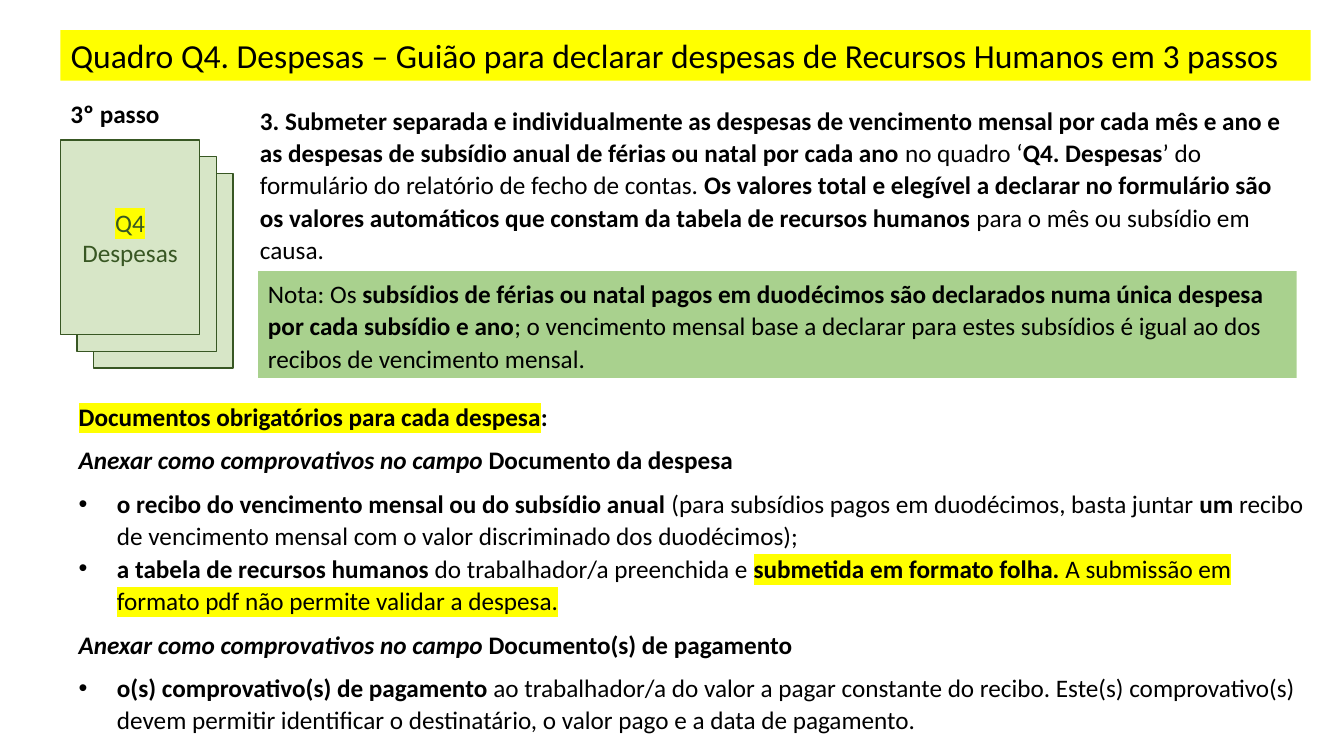
from lxml import etree
from pptx import Presentation
from pptx.dml.color import RGBColor
from pptx.enum.shapes import MSO_SHAPE
from pptx.enum.text import MSO_ANCHOR, MSO_AUTO_SIZE, PP_ALIGN
from pptx.oxml.ns import qn
from pptx.util import Inches, Pt

BLACK = RGBColor(0x00, 0x00, 0x00)
YELLOW = RGBColor(0xFF, 0xFF, 0x00)
GREEN = RGBColor(0xA9, 0xD1, 0x8E)
PALE = RGBColor(0xD7, 0xE6, 0xC7)
DARK = RGBColor(0x38, 0x57, 0x23)
RECT = MSO_SHAPE.RECTANGLE
LEFT, CENTER = PP_ALIGN.LEFT, PP_ALIGN.CENTER
TOP, MIDDLE = MSO_ANCHOR.TOP, MSO_ANCHOR.MIDDLE
GROW, FIXED = MSO_AUTO_SIZE.SHAPE_TO_FIT_TEXT, MSO_AUTO_SIZE.NONE
INDENT = Inches(0.38)


def write(shape, paras, size=18, color=BLACK, align=LEFT, anchor=TOP,
          fit=GROW, line=1.07, after=8):
    """Fill a shape with paragraphs of (text, style) runs.

    Style letters: b bold, i italic, h highlight.
    """
    frame = shape.text_frame
    frame.word_wrap = True
    frame.auto_size = fit
    frame.vertical_anchor = anchor
    for n, runs in enumerate(paras):
        para = frame.add_paragraph() if n else frame.paragraphs[0]
        para.alignment = align
        para.line_spacing = line
        para.space_before = Pt(0)
        para.space_after = Pt(after)
        for text, style in runs:
            run = para.add_run()
            run.text = text
            font = run.font
            font.size = Pt(size)
            font.bold = "b" in style
            font.italic = "i" in style
            font.color.rgb = color
            if "h" in style:
                mark = etree.SubElement(run._r.get_or_add_rPr(), qn("a:highlight"))
                etree.SubElement(mark, qn("a:srgbClr"), val=str(YELLOW))
            font.name = "Calibri"


def place(shape, left, top, width, height):
    shape.left, shape.top = Inches(left), Inches(top)
    shape.width, shape.height = Inches(width), Inches(height)


deck = Presentation()
deck.slide_width, deck.slide_height = Inches(13.33), Inches(7.5)
slide = deck.slides.add_slide(deck.slide_layouts[1])
shapes = slide.shapes

# Title bar
title = shapes.title
place(title, 0.6, 0.3, 12.4, 0.5)
title.fill.solid()
title.fill.fore_color.rgb = YELLOW
write(title, [[("Quadro Q4. Despesas – Guião para declarar despesas de "
                "Recursos Humanos em 3 passos", "")]],
      size=24, anchor=MIDDLE, fit=FIXED, line=1.0, after=0)

# Step text
step = shapes.add_textbox(Inches(2.48), Inches(0.97), Inches(10.47), Inches(1.71))
write(step, [[
    ("3. Submeter separada e individualmente as despesas de vencimento mensal "
     "por cada mês e ano e as despesas de subsídio anual de férias ou natal "
     "por cada ano", "b"),
    (" no quadro ‘", ""),
    ("Q4. Despesas", "b"),
    ("’ do formulário do relatório de fecho de contas.", ""),
    (" Os valores total e elegível a declarar no formulário são os valores "
     "automáticos que constam da tabela de recursos humanos", "b"),
    (" para o mês ou subsídio em causa.", ""),
]])

# Stack of cards, back to front
for n in (2, 1, 0):
    shift = n * 0.165
    card = shapes.add_shape(RECT, Inches(0.6 + shift), Inches(1.39 + shift),
                            Inches(1.38), Inches(1.93))
    card.shadow.inherit = False
    card.fill.solid()
    card.fill.fore_color.rgb = PALE
    card.line.color.rgb = DARK
    card.line.width = Pt(1)
write(card, [[("Q4", "h"), (" Despesas", "")]], color=DARK, align=CENTER,
      anchor=MIDDLE, fit=FIXED, line=1.0, after=0)

label = shapes.add_textbox(Inches(0.6), Inches(0.93), Inches(1.21), Inches(0.4))
write(label, [[("3º passo", "b")]], line=1.0, after=0)

# Required documents
body = slide.placeholders[1]
place(body, 0.68, 3.91, 12.45, 3.45)
write(body, [
    [("Documentos obrigatórios para cada despesa", "bh"), (":", "b")],
    [("Anexar como comprovativos no campo ", "bi"), ("Documento da despesa", "b")],
    [("o recibo do vencimento mensal ou do subsídio anual", "b"),
     (" (para subsídios pagos em duodécimos, basta juntar ", ""),
     ("um", "b"),
     (" recibo de vencimento mensal com o valor discriminado dos duodécimos);", "")],
    [("a tabela de recursos humanos", "b"),
     (" do trabalhador/a preenchida e ", ""),
     ("submetida", "bh"), (" ", "h"), ("em formato folha. ", "bh"),
     ("A submissão em formato pdf não permite validar a despesa.", "h")],
    [("Anexar como comprovativos no campo ", "bi"),
     ("Documento(s) de pagamento", "b")],
    [("o(s) comprovativo(s) de pagamento", "b"),
     (" ao trabalhador/a do valor a pagar constante do recibo. Este(s) "
      "comprovativo(s) devem permitir identificar o destinatário, o valor "
      "pago e a data de pagamento.", "")],
])
items = body.text_frame.paragraphs
for n, para in enumerate(items):
    props = para._p.get_or_add_pPr()
    head = n in (0, 1, 4)
    props.set("marL", str(0 if head else INDENT))
    props.set("indent", str(0 if head else -INDENT))
    if head:
        etree.SubElement(props, qn("a:buNone"))
    else:
        etree.SubElement(props, qn("a:buFont"), typeface="Arial")
        etree.SubElement(props, qn("a:buChar"), char="•")
items[2].space_after = Pt(0)

# Note
note = shapes.add_shape(RECT, Inches(2.56), Inches(2.69), Inches(10.3), Inches(1.06))
note.shadow.inherit = False
note.fill.solid()
note.fill.fore_color.rgb = GREEN
note.line.fill.background()
write(note, [[
    ("Nota: Os ", ""),
    ("subsídios de férias ou natal pagos em duodécimos são declarados numa "
     "única despesa por cada subsídio e ano", "b"),
    ("; o vencimento mensal base a declarar para estes subsídios é igual ao "
     "dos recibos de vencimento mensal.", ""),
]])

deck.save("out.pptx")
